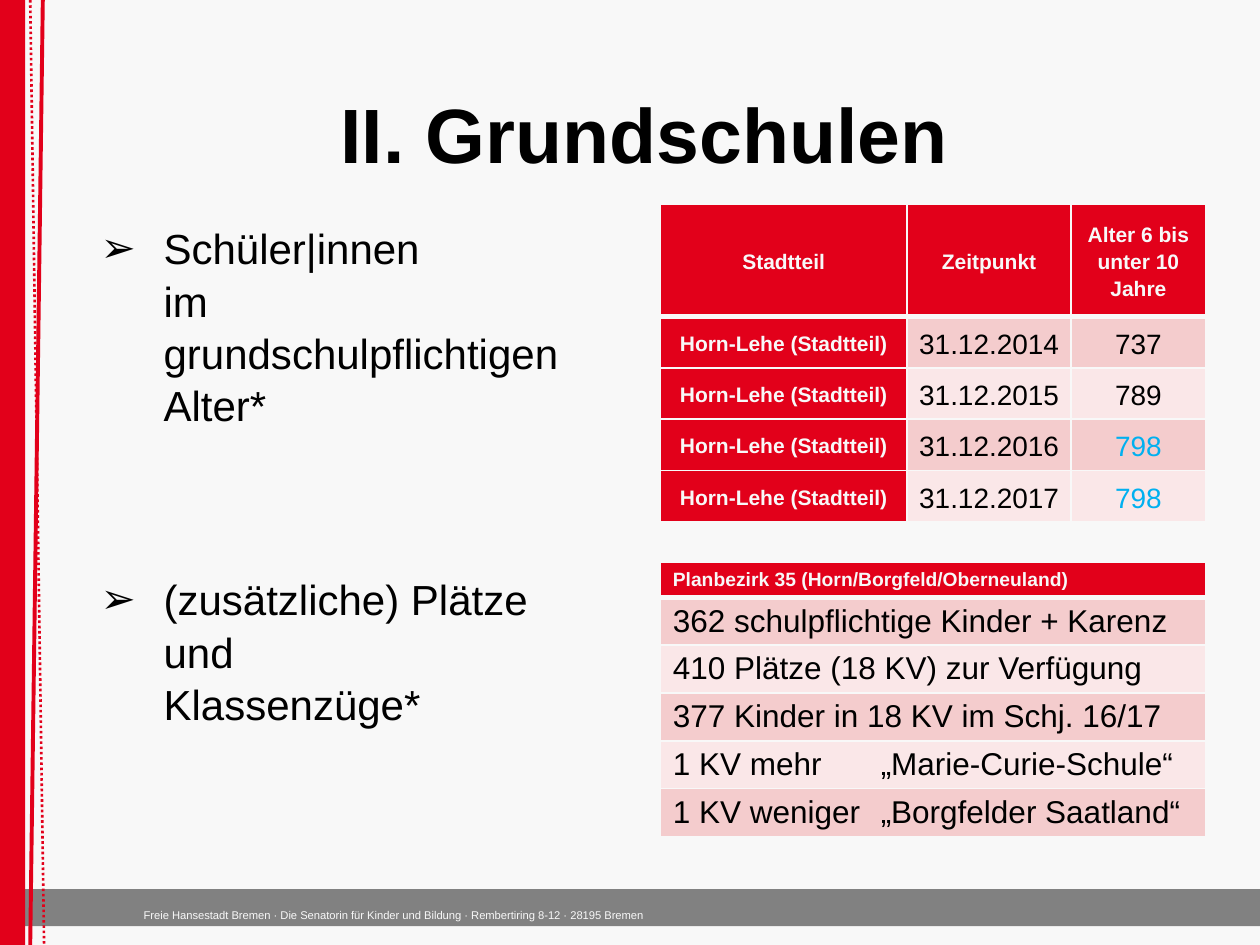
from dataclasses import dataclass

from lxml.etree import SubElement
from pptx import Presentation
from pptx.dml.color import RGBColor
from pptx.enum.dml import MSO_LINE
from pptx.enum.shapes import MSO_CONNECTOR, MSO_SHAPE
from pptx.enum.text import MSO_ANCHOR, PP_ALIGN
from pptx.oxml.ns import qn
from pptx.util import Inches, Pt

WIDTH, HEIGHT = Inches(10), Inches(7.5)
RED, PAPER, BLACK, BLUE, GRAY = "E2001A", "F8F8F8", "000000", "00B0F0", "333333"
BANDS = ("F4CCCD", "FAE7E8")
FONT = "Arial"


@dataclass
class Box:
    """A rectangle in percent of the slide's width and height."""
    left: float
    top: float
    width: float
    height: float

    def lengths(self) -> tuple:
        return (across(self.left), down(self.top),
                across(self.width), down(self.height))


@dataclass
class Cell:
    text: str
    size: float
    color: str
    fill: str
    bold: bool = False


@dataclass
class TableLayout:
    box: Box
    columns: tuple  # percent of the slide's width
    rows: tuple  # percent of the slide's height
    margins: tuple  # inches: sides, top and bottom
    align: PP_ALIGN
    line_spacing: float
    tab: float = 0  # percent of the slide's width


def across(percent: float) -> int:
    return round(WIDTH * percent / 100)


def down(percent: float) -> int:
    return round(HEIGHT * percent / 100)


def rgb(value: str) -> RGBColor:
    return RGBColor.from_string(value)


def style(paragraph, size: float, color: str, bold: bool = False) -> None:
    font = paragraph.font
    font.name, font.size, font.bold = FONT, Pt(size), bold
    font.color.rgb = rgb(color)


def add_bar(slide, box: Box, color: str):
    shape = slide.shapes.add_shape(MSO_SHAPE.RECTANGLE, *box.lengths())
    shape.shadow.inherit = False
    shape.fill.solid()
    shape.fill.fore_color.rgb = rgb(color)
    shape.line.fill.background()
    return shape


def add_stripe(slide, x_top: float, x_bottom: float, weight: float, dotted: bool) -> None:
    line = slide.shapes.add_connector(
        MSO_CONNECTOR.STRAIGHT, across(x_top), 0, across(x_bottom), HEIGHT)
    line.line.color.rgb = rgb(RED)
    line.line.width = Pt(weight)
    if dotted:
        line.line.dash_style = MSO_LINE.ROUND_DOT
    SubElement(line._element.spPr, qn("a:effectLst"))


def add_text_frame(slide, box: Box):
    frame = slide.shapes.add_textbox(*box.lengths()).text_frame
    frame.word_wrap = True
    return frame


def add_bullet(paragraph, symbol: str) -> None:
    properties = paragraph._p.get_or_add_pPr()
    properties.set("marL", str(Inches(0.5)))
    properties.set("indent", str(-Inches(0.5)))
    SubElement(properties, qn("a:buFont")).set("typeface", FONT)
    SubElement(properties, qn("a:buChar")).set("char", symbol)


def set_borders(cell, top: float, bottom: float) -> None:
    properties = cell._tc.get_or_add_tcPr()
    for side, weight in (("L", 1), ("R", 1), ("T", top), ("B", bottom)):
        border = SubElement(properties, qn(f"a:ln{side}"))
        border.set("w", str(Pt(weight)))
        fill = SubElement(border, qn("a:solidFill"))
        SubElement(fill, qn("a:srgbClr")).set("val", PAPER)


def add_table(slide, layout: TableLayout, rows: list) -> None:
    table = slide.shapes.add_table(
        len(rows), len(layout.columns), *layout.box.lengths()).table
    for column, width in zip(table.columns, layout.columns):
        column.width = across(width)
    for row, height in zip(table.rows, layout.rows):
        row.height = down(height)
    side, edge = (Inches(margin) for margin in layout.margins)
    for row_index, row in enumerate(rows):
        for column_index, content in enumerate(row):
            cell = table.cell(row_index, column_index)
            cell.margin_left = cell.margin_right = side
            cell.margin_top = cell.margin_bottom = edge
            cell.vertical_anchor = MSO_ANCHOR.MIDDLE
            # The header is set off by a thick rule
            set_borders(cell, 3 if row_index == 1 else 1, 3 if row_index == 0 else 1)
            cell.fill.solid()
            cell.fill.fore_color.rgb = rgb(content.fill)
            paragraph = cell.text_frame.paragraphs[0]
            paragraph.text = content.text
            paragraph.alignment = layout.align
            paragraph.line_spacing = layout.line_spacing
            if layout.tab:
                tabs = SubElement(paragraph._p.get_or_add_pPr(), qn("a:tabLst"))
                stop = SubElement(tabs, qn("a:tab"))
                stop.set("pos", str(across(layout.tab)))
                stop.set("algn", "l")
            style(paragraph, content.size, content.color, content.bold)


def add_frame(slide) -> None:
    # Footer bar with the address as small lowered text
    footer = add_bar(slide, Box(0, 94.1, 100, 3.9), GRAY)
    color = footer.fill._xPr.find(qn("a:solidFill"))[0]
    SubElement(color, qn("a:alpha")).set("val", "60000")
    frame = footer.text_frame
    frame.margin_left = Inches(1.14)
    frame.vertical_anchor = MSO_ANCHOR.TOP
    paragraph = frame.paragraphs[0]
    paragraph.text = ("Freie Hansestadt Bremen · Die Senatorin für Kinder und Bildung"
                      " · Rembertiring 8-12 · 28195 Bremen")
    paragraph.alignment = PP_ALIGN.LEFT
    style(paragraph, 11, PAPER)
    paragraph.runs[0].font._element.set("baseline", "-25000")
    # Red stripes along the left edge
    add_stripe(slide, 3.4, 2.4, 2.25, False)
    add_bar(slide, Box(0, 0, 2, 100), RED)
    add_stripe(slide, 2.4, 3.5, 1.5, True)


def main() -> None:
    presentation = Presentation()
    presentation.slide_width, presentation.slide_height = WIDTH, HEIGHT
    slide = presentation.slides.add_slide(presentation.slide_layouts[6])
    slide.background.fill.solid()
    slide.background.fill.fore_color.rgb = rgb(PAPER)
    add_frame(slide)

    # Title
    frame = add_text_frame(slide, Box(9.1, 6.7, 84.1, 16))
    frame.vertical_anchor = MSO_ANCHOR.MIDDLE
    title = frame.paragraphs[0]
    title.text = "II. Grundschulen"
    title.alignment = PP_ALIGN.CENTER
    title.line_spacing = 0.9
    style(title, 44, BLACK, True)

    # Bullet points
    frame = add_text_frame(slide, Box(7, 22.7, 44.1, 62.9))
    points = ("Schüler|innen\vim\vgrundschulpflichtigen\vAlter*",
              "(zusätzliche) Plätze\vund\vKlassenzüge*")
    for index, text in enumerate(points):
        paragraph = frame.add_paragraph() if index else frame.paragraphs[0]
        paragraph.text = text
        paragraph.line_spacing = 1.04
        if index:
            paragraph.space_before = Pt(81)
        add_bullet(paragraph, "➢")
        style(paragraph, 24, BLACK)

    # Pupils by date
    headings = ("Stadtteil", "Zeitpunkt", "Alter 6 bis unter 10 Jahre")
    pupils = ((2014, "737", BLACK), (2015, "789", BLACK),
              (2016, "798", BLUE), (2017, "798", BLUE))
    rows = [[Cell(text, 12, PAPER, RED, True) for text in headings]]
    for index, (year, count, color) in enumerate(pupils):
        band = BANDS[index % 2]
        rows.append([Cell("Horn-Lehe (Stadtteil)", 12, PAPER, RED, True),
                     Cell(f"31.12.{year}", 16, BLACK, band),
                     Cell(count, 16, color, band)])
    add_table(slide, TableLayout(Box(52.4, 21.6, 43.3, 33.6), (19.6, 13, 10.7),
                                 (11.9,) + (5.43,) * 4, (0.05, 0),
                                 PP_ALIGN.CENTER, 1.15), rows)

    # Places in the planning district
    places = ("362 schulpflichtige Kinder + Karenz", "410 Plätze (18 KV) zur Verfügung",
              "377 Kinder in 18 KV im Schj. 16/17", "1 KV mehr\t„Marie-Curie-Schule“",
              "1 KV weniger\t„Borgfelder Saatland“")
    rows = [[Cell("Planbezirk 35 (Horn/Borgfeld/Oberneuland)", 11, PAPER, RED, True)]]
    rows += [[Cell(text, 18, BLACK, BANDS[index % 2])] for index, text in enumerate(places)]
    add_table(slide, TableLayout(Box(52.4, 59.5, 43.3, 29), (43.3,),
                                 (3.7,) + (5.07,) * 5, (0.1, 0.04),
                                 PP_ALIGN.LEFT, 1, 16.5), rows)
    presentation.save("out.pptx")


if __name__ == "__main__":
    main()
